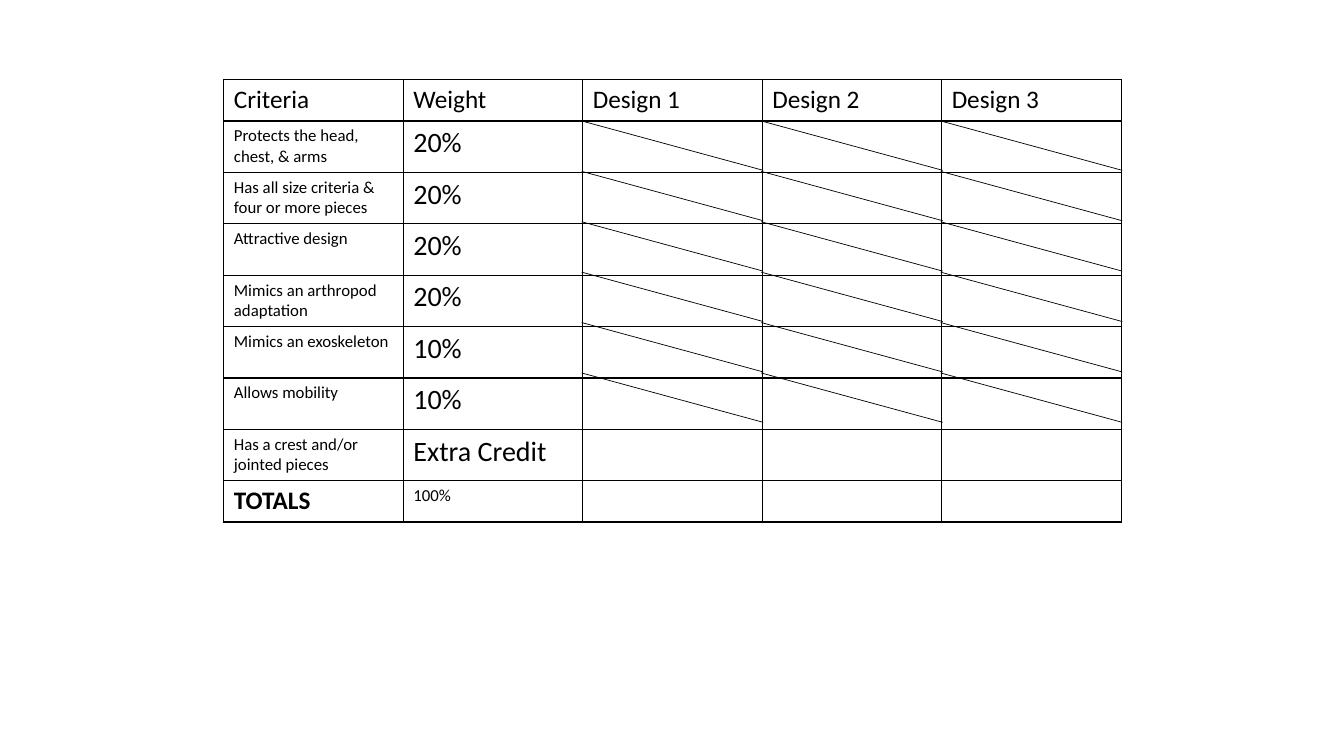
from itertools import product

from lxml.etree import SubElement
from pptx import Presentation
from pptx.dml.color import RGBColor
from pptx.enum.shapes import MSO_CONNECTOR as Connector
from pptx.oxml.ns import qn
from pptx.util import Pt

EMU_PER_PX = 9144
COLORS = {"ink": "000000"}
FONT = "Calibri"

TABLE_LEFT, TABLE_TOP = 222, 79
COLUMN_WIDTH, COLUMN_COUNT = 178, 5
EDGE_ROW_HEIGHT, CRITERION_ROW_HEIGHT = 41, 51

HEADINGS = ["Criteria", "Weight", "Design 1", "Design 2", "Design 3"]
CRITERIA = [
    ("Protects the head, chest, & arms", "20%"),
    ("Has all size criteria & four or more pieces", "20%"),
    ("Attractive design", "20%"),
    ("Mimics an arthropod adaptation", "20%"),
    ("Mimics an exoskeleton", "10%"),
    ("Allows mobility", "10%"),
    ("Has a crest and/or jointed pieces", "Extra Credit"),
]
TOTALS = ("TOTALS", "100%")

DIAGONAL_LEFT, DIAGONAL_TOP = 577, 120
DIAGONAL_WIDTH, DIAGONAL_HEIGHT = 180, 49
DIAGONAL_ROW_STEP = 50
DIAGONAL_ROWS, DIAGONAL_COLUMNS = 6, 3


def px(length):
    return length * EMU_PER_PX


def color(name):
    return RGBColor.from_string(COLORS[name])


def set_borders(cell):
    properties = cell._tc.get_or_add_tcPr()
    for side in ("lnL", "lnR", "lnT", "lnB"):
        border = SubElement(properties, qn(f"a:{side}"), w=str(Pt(1)))
        fill = SubElement(border, qn("a:solidFill"))
        SubElement(fill, qn("a:srgbClr"), val=COLORS["ink"])


def write_cell(cell, text, size, bold=False):
    cell.text = text
    font = cell.text_frame.paragraphs[0].font
    font.name = FONT
    font.size = Pt(size)
    font.bold = bold
    font.color.rgb = color("ink")


def add_criteria_table(slide):
    heights = [EDGE_ROW_HEIGHT, *[CRITERION_ROW_HEIGHT] * len(CRITERIA), EDGE_ROW_HEIGHT]
    table = slide.shapes.add_table(
        len(heights), COLUMN_COUNT, px(TABLE_LEFT), px(TABLE_TOP),
        px(COLUMN_WIDTH * COLUMN_COUNT), px(sum(heights)),
    ).table
    table.first_row = False
    table.horz_banding = False
    for column in table.columns:
        column.width = px(COLUMN_WIDTH)
    for row, height in zip(table.rows, heights):
        row.height = px(height)
    for cell in table.iter_cells():
        set_borders(cell)
        cell.fill.background()

    for column, heading in enumerate(HEADINGS):
        write_cell(table.cell(0, column), heading, 18)
    for row, (criterion, weight) in enumerate(CRITERIA, start=1):
        write_cell(table.cell(row, 0), criterion, 12)
        write_cell(table.cell(row, 1), weight, 20)
    last_row = len(heights) - 1
    write_cell(table.cell(last_row, 0), TOTALS[0], 18, bold=True)
    write_cell(table.cell(last_row, 1), TOTALS[1], 12)


def add_diagonal(slide, left, top):
    line = slide.shapes.add_connector(
        Connector.STRAIGHT, px(left), px(top),
        px(left + DIAGONAL_WIDTH), px(top + DIAGONAL_HEIGHT),
    )
    line.line.color.rgb = color("ink")
    line.line.width = Pt(0.5)
    SubElement(line._element.spPr, qn("a:effectLst"))


def main():
    presentation = Presentation()
    presentation.slide_width = px(1333)
    presentation.slide_height = px(750)
    slide = presentation.slides.add_slide(presentation.slide_layouts[6])
    add_criteria_table(slide)
    for row, column in product(range(DIAGONAL_ROWS), range(DIAGONAL_COLUMNS)):
        add_diagonal(
            slide,
            DIAGONAL_LEFT + column * COLUMN_WIDTH,
            DIAGONAL_TOP + row * DIAGONAL_ROW_STEP,
        )
    presentation.save("out.pptx")


if __name__ == "__main__":
    main()
